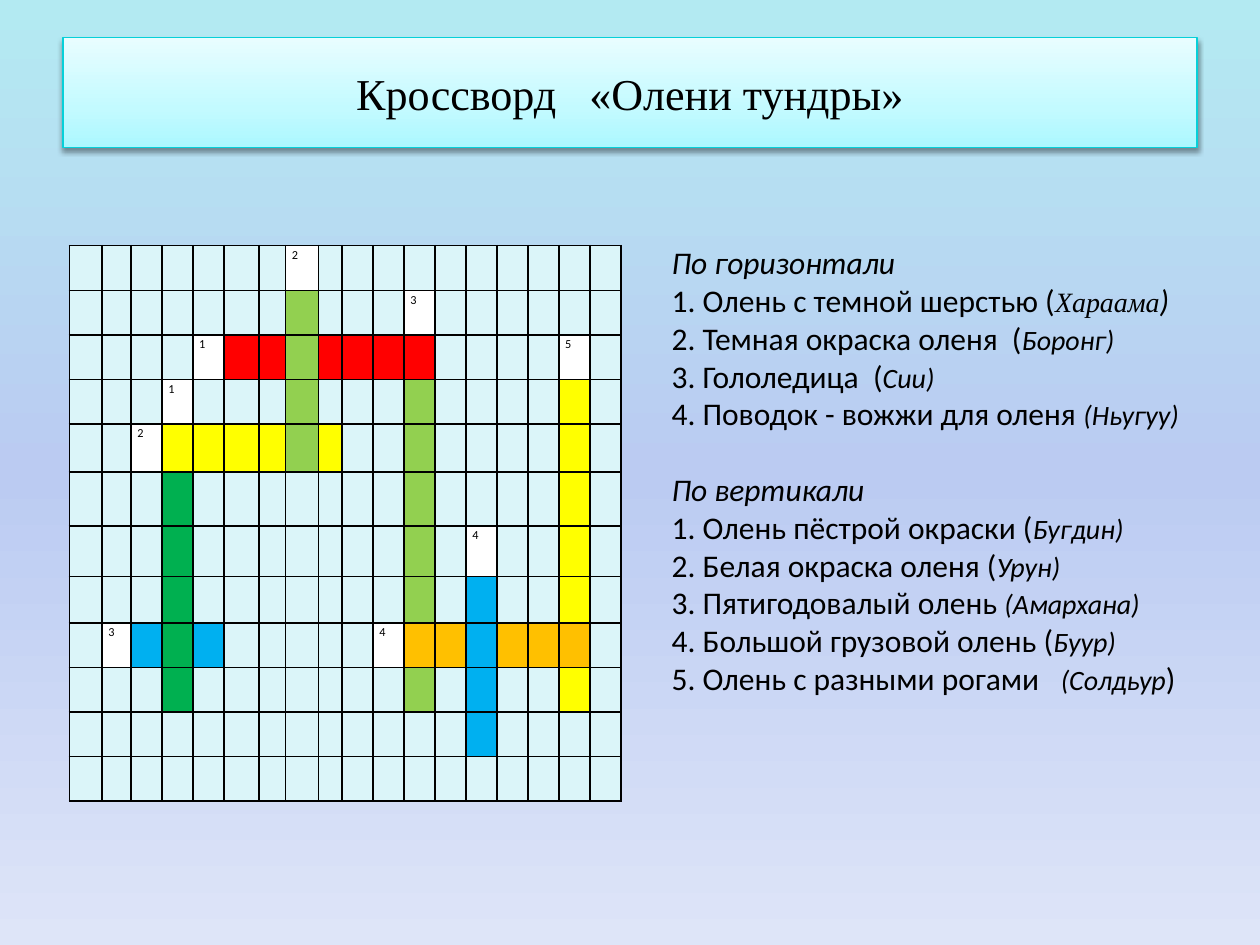
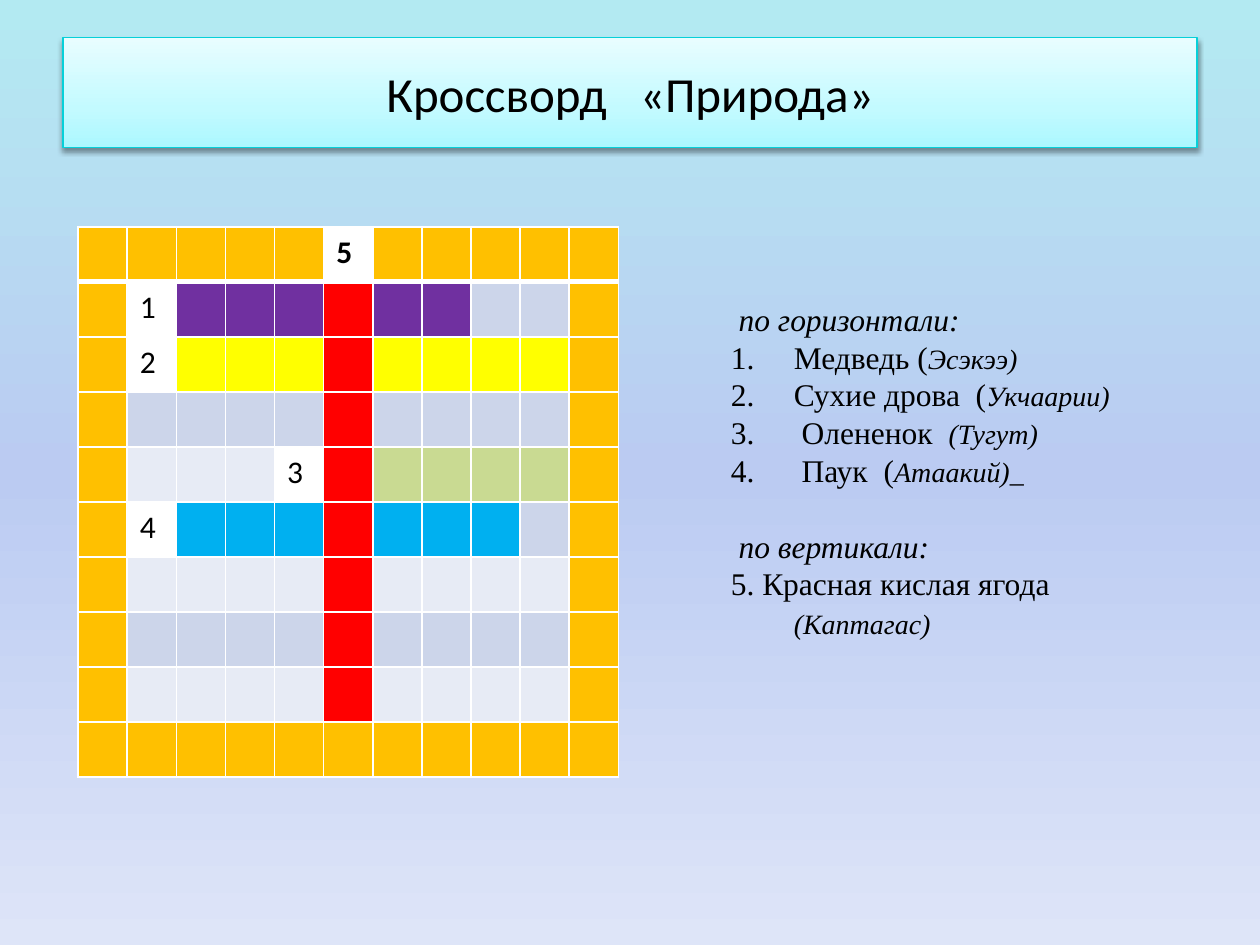
"""Builds two crossword slides with coloured letter grids and clue lists."""
import lxml.etree
import pptx
import pptx.dml.color
import pptx.enum.text
import pptx.oxml.ns
import pptx.util

Inches = pptx.util.Inches
Pt = pptx.util.Pt
RGB = pptx.dml.color.RGBColor
qn = pptx.oxml.ns.qn

BLACK = RGB(0, 0, 0)
WHITE = RGB(255, 255, 255)
EDGE = RGB(0x06, 0xD0, 0xD9)
ICE = RGB(0xDB, 0xF5, 0xF9)
RED = RGB(255, 0, 0)
LIME = RGB(0x92, 0xD0, 0x50)
GREEN = RGB(0, 0xB0, 0x50)
YELLOW = RGB(255, 255, 0)
BLUE = RGB(0, 0xB0, 0xF0)
ORANGE = RGB(255, 0xC0, 0)
PURPLE = RGB(0x70, 0x30, 0xA0)
OLIVE = RGB(0xC9, 0xDA, 0x92)
GREY = RGB(0xCC, 0xD5, 0xEA)
PALE = RGB(0xE7, 0xEB, 0xF5)

SKY = [(0, RGB(0xB3, 0xEA, 0xF2)), (50, RGB(0xBB, 0xCB, 0xF2)),
       (100, RGB(0xDE, 0xE5, 0xF8))]
BAND = [(0, RGB(0xAB, 0xF8, 0xFF)), (35, RGB(0xC3, 0xFA, 0xFF)),
        (100, RGB(0xE8, 0xFD, 0xFF))]
INKS = {".": ICE, "r": RED, "g": LIME, "d": GREEN, "y": YELLOW, "b": BLUE,
        "o": ORANGE, "p": PURPLE, "l": OLIVE, "-": GREY, "~": PALE}

SANS = "Calibri"
SERIF = "Times New Roman"
HEAD = {"italic": True}
LEAD = {}
REPLY = {"size": 16, "italic": True}
LINE = Pt(21.6)

DEER = [".......2..........",
        ".......g...3......",
        "....1rrgrrrr....5.",
        "...1...g...g....y.",
        "..2yyyygy..g....y.",
        "...d.......g....y.",
        "...d.......g.4..y.",
        "...d.......g.b..y.",
        ".3bdb.....4oobooo.",
        "...d.......g.b..y.",
        ".............b....",
        ".................."]
WILD = ["ooooo5ooooo",
        "o1ppprpp--o",
        "o2yyyryyyyo",
        "o----r----o",
        "o~~~3rllllo",
        "o4bbbrbbb-o",
        "o~~~~r~~~~o",
        "o----r----o",
        "o~~~~r~~~~o",
        "ooooooooooo"]


def write(par, text, font=SANS, size=18, bold=False, italic=False):
    run = par.add_run()
    run.text = text
    run.font.name = font
    run.font.size = Pt(size)
    run.font.bold = bold
    run.font.italic = italic
    run.font.color.rgb = BLACK


def node(up, tag, **attrs):
    kid = lxml.etree.SubElement(up, qn(tag))
    for key, value in attrs.items():
        kid.set(key, str(value))
    return kid


def blend(up, stops, angle):
    old = up.find(qn("a:solidFill"))
    fill = node(up, "a:gradFill", rotWithShape=1)
    row = node(fill, "a:gsLst")
    for pos, tint in stops:
        node(node(row, "a:gs", pos=pos * 1000), "a:srgbClr", val=tint)
    node(fill, "a:lin", ang=angle * 60000, scaled=0)
    up.replace(old, fill)


def share(total, count, odd):
    rest = (total - sum(odd.values())) / (count - len(odd))
    return [Inches(odd.get(i, rest)) for i in range(count)]


class Deck:
    def __init__(self):
        self.prs = pptx.Presentation()
        self.prs.slide_width = Inches(10)
        self.prs.slide_height = Inches(7.5)
        master = self.prs.slide_master
        master.background.fill.solid()
        blend(next(master.element.iter(qn("p:bgPr"))), SKY, 90)

    def place(self, item, left, top, width, height):
        item.left, item.top = Inches(left), Inches(top)
        item.width, item.height = Inches(width), Inches(height)

    def title(self, text, **form):
        self.slide = self.prs.slides.add_slide(self.prs.slide_layouts[1])
        band = self.slide.shapes.title
        self.place(band, 0.5, 0.3, 9, 0.87)
        band.fill.solid()
        props = band.fill._xPr
        blend(props, BAND, 270)
        band.line.color.rgb = EDGE
        band.line.width = Pt(0.75)
        band.shadow.inherit = False
        glow = node(props.find(qn("a:effectLst")), "a:outerShdw",
                    blurRad=Pt(3.1), dist=Pt(1.6), dir=5400000, rotWithShape=0)
        node(node(glow, "a:srgbClr", val=BLACK), "a:alpha", val=38000)
        frame = band.text_frame
        frame.vertical_anchor = pptx.enum.text.MSO_ANCHOR.MIDDLE
        par = frame.paragraphs[0]
        par.alignment = pptx.enum.text.PP_ALIGN.CENTER
        write(par, text, **form)

    def clues(self, spot, parts, font=SANS, hang=0, count=False):
        body = self.slide.placeholders[1]
        self.place(body, *spot)
        frame = body.text_frame
        frame.word_wrap = True
        frame.auto_size = pptx.enum.text.MSO_AUTO_SIZE.NONE
        par = frame.paragraphs[0]
        for num, (head, rows) in enumerate(parts):
            for pos, runs in enumerate([[(head, HEAD)]] + rows):
                if num or pos:
                    par = frame.add_paragraph()
                par.line_spacing = LINE
                par.space_before = LINE if num and not pos else Pt(0)
                props = par._p.get_or_add_pPr()
                inset = hang if num or pos else 0
                props.set("marL", str(Inches(inset)))
                props.set("indent", str(-Inches(inset)))
                if count and pos and not num:
                    node(props, "a:buFont", typeface="+mj-lt")
                    node(props, "a:buAutoNum", type="arabicPeriod")
                else:
                    node(props, "a:buNone")
                for text, form in runs:
                    write(par, text, **{"font": font, **form})

    def border(self, cell, tint, top, base):
        props = cell._tc.get_or_add_tcPr()
        for pos, (side, width) in enumerate(
                [("L", 1), ("R", 1), ("T", top), ("B", base)]):
            line = node(props, "a:ln" + side, w=Pt(width))
            node(node(line, "a:solidFill"), "a:srgbClr", val=tint)
            props.insert(pos, line)

    def grid(self, spot, rows, tint, wide={}, tall={}, size=18, pads=None,
             space=1, header=False):
        box = [Inches(n) for n in spot]
        table = self.slide.shapes.add_table(
            len(rows), len(rows[0]), *box).table
        table.first_row = header
        table.horz_banding = False
        for col, width in zip(table.columns, share(spot[2], len(rows[0]), wide)):
            col.width = width
        for row, height in zip(table.rows, share(spot[3], len(rows), tall)):
            row.height = height
        for y, marks in enumerate(rows):
            for x, mark in enumerate(marks):
                cell = table.cell(y, x)
                if pads:
                    cell.margin_left = cell.margin_right = Inches(pads[0])
                    cell.margin_top = cell.margin_bottom = Inches(pads[1])
                cell.fill.solid()
                cell.fill.fore_color.rgb = INKS.get(mark, WHITE)
                self.border(cell, tint, 3 if header and y == 1 else 1,
                            3 if header and y == 0 else 1)
                if mark.isdigit():
                    par = cell.text_frame.paragraphs[0]
                    par.line_spacing = float(space)
                    write(par, mark, size=size, bold=header and y == 0)


def clue(lead, reply, *more):
    return [(lead, LEAD), (reply, REPLY), *more]


def main():
    deck = Deck()

    deck.title("Кроссворд   «Олени тундры»", font=SERIF, size=25.2)
    deck.grid((0.55, 1.95, 4.38, 4.41), DEER, BLACK,
              wide={0: 0.26, 1: 0.23, 5: 0.28, 6: 0.21, 7: 0.26, 8: 0.19},
              tall={4: 0.38, 5: 0.43, 6: 0.4, 7: 0.37},
              size=7, pads=(0.05, 0), space=1.15)
    deck.clues((5.23, 1.88, 4.45, 3.74), [
        ("По горизонтали", [
            [("1. Олень с темной шерстью (", LEAD),
             ("Хараама", {**REPLY, "font": SERIF}), (")", HEAD)],
            clue("2. Темная окраска оленя  (", "Боронг)"),
            clue("3. Гололедица  (", "Сии)"),
            clue("4. Поводок - вожжи для оленя ", "(Ньугуу)")]),
        ("По вертикали", [
            clue("1. Олень пёстрой окраски (", "Бугдин)"),
            clue("2. Белая окраска оленя (", "Урун)"),
            clue("3. Пятигодовалый олень ", "(Амархана)"),
            clue("4. Большой грузовой олень (", "Буур)"),
            clue("5. Олень с разными рогами   ", "(Солдьур", (")", LEAD))])])

    deck.title("Кроссворд   «Природа»", size=28)
    deck.grid((0.62, 1.8, 4.29, 4.37), WILD, WHITE, header=True)
    deck.clues((5.7, 2.33, 3.52, 2.83), [
        (" по горизонтали:", [
            clue("Медведь (", "Эсэкээ)"),
            clue("Сухие дрова  (", "Укчаарии)"),
            clue(" Олененок  ", "(Тугут)"),
            clue(" Паук  (", "Атаакий)_")]),
        (" по вертикали:", [
            clue("5. Красная кислая ягода  ", "(Каптагас)")])],
        font=SERIF, hang=0.5, count=True)

    deck.prs.save("out.pptx")


if __name__ == "__main__":
    main()
